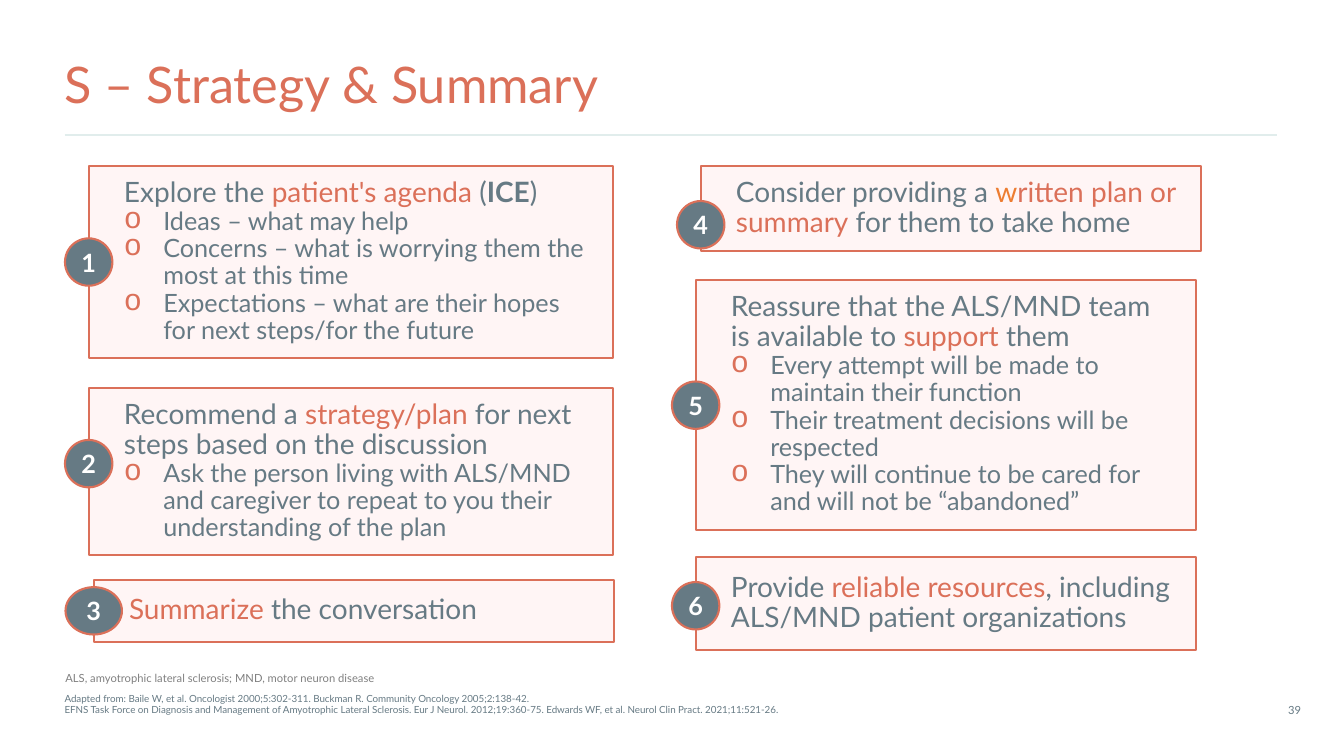
from dataclasses import dataclass

from lxml import etree
from pptx import Presentation
from pptx.dml.color import RGBColor
from pptx.enum.shapes import MSO_CONNECTOR, MSO_SHAPE
from pptx.enum.text import MSO_ANCHOR, MSO_AUTO_SIZE, PP_ALIGN
from pptx.oxml.ns import qn
from pptx.util import Inches, Pt

RECTANGLE, OVAL = MSO_SHAPE.RECTANGLE, MSO_SHAPE.OVAL
TOP, MIDDLE, BOTTOM = MSO_ANCHOR.TOP, MSO_ANCHOR.MIDDLE, MSO_ANCHOR.BOTTOM
LEFT, CENTER = PP_ALIGN.LEFT, PP_ALIGN.CENTER


@dataclass(frozen=True)
class Theme:
    font: str = "Lato"
    accent: str = "DB7059"
    slate: str = "667A84"
    orange: str = "ED7D31"
    blush: str = "FFF5F5"
    white: str = "FFFFFF"
    gray: str = "808080"
    rule: str = "E1EDEC"
    title_size: float = 36
    lead_size: float = 20
    bullet_size: float = 18
    note_size: float = 8
    source_size: float = 7
    line_width: float = 1.5
    spacing: float = 0.9


theme = Theme()


def set_frame(frame, anchor, insets=(0, 0, 0, 0), wrap=True):
    frame.auto_size = MSO_AUTO_SIZE.NONE
    frame.word_wrap = wrap
    frame.vertical_anchor = anchor
    (frame.margin_left, frame.margin_top,
     frame.margin_right, frame.margin_bottom) = map(Inches, insets)


def format_paragraph(paragraph, size, color, align=LEFT, spacing=theme.spacing, bold=False):
    paragraph.alignment = align
    paragraph.line_spacing = spacing
    paragraph.space_before = paragraph.space_after = Pt(0)
    paragraph.font.name = theme.font
    paragraph.font.size = Pt(size)
    paragraph.font.bold = bold
    paragraph.font.color.rgb = RGBColor.from_string(color)


presentation = Presentation()
presentation.slide_width, presentation.slide_height = Inches(13.33), Inches(7.5)
slide = presentation.slides.add_slide(presentation.slide_layouts[1])
shapes = slide.shapes

# Page grid, in inches
margin, content_width = 0.64, 12.03
badge_size = 0.47

# Title and the rule below it
title = shapes.title
title.left, title.top = Inches(margin), Inches(0.59)
title.width, title.height = Inches(content_width), Inches(0.55)
set_frame(title.text_frame, MIDDLE)
title.text_frame.text = "S – Strategy & Summary"
format_paragraph(title.text_frame.paragraphs[0], theme.title_size, theme.accent)

rule = shapes.add_connector(MSO_CONNECTOR.STRAIGHT, Inches(margin), Inches(1.34),
                            Inches(margin + content_width), Inches(1.34))
rule.line.color.rgb = RGBColor.from_string(theme.rule)
rule.line.width = Pt(theme.line_width)
etree.SubElement(rule._element.spPr, qn("a:effectLst"))

# Sources in the body placeholder
sources = slide.placeholders[1]
sources.left, sources.top = Inches(margin), Inches(6.89)
sources.width, sources.height = Inches(11.13), Inches(0.21)
set_frame(sources.text_frame, BOTTOM)
sources.text_frame.text = (
    "Adapted from: Baile W, et al. Oncologist 2000;5:302-311. "
    "Buckman R. Community Oncology 2005;2:138-42.\n"
    "EFNS Task Force on Diagnosis and Management of Amyotrophic Lateral Sclerosis. "
    "Eur J Neurol. 2012;19:360-75. Edwards WF, et al. Neurol Clin Pract. 2021;11:521-26.")
for paragraph in sources.text_frame.paragraphs:
    properties = paragraph._p.get_or_add_pPr()
    properties.set("marL", "0")
    properties.set("indent", "0")
    etree.SubElement(properties, qn("a:buNone"))
    format_paragraph(paragraph, theme.source_size, theme.slate)

# Cards in number order: box, vertical inset, badge width, badge drop from the
# middle of the box, lead runs (text, colour, bold), bullets
slate, accent, orange = theme.slate, theme.accent, theme.orange
cards = [
    ((0.88, 1.65, 5.2, 1.9), 0.12, badge_size, 0,
     [("Explore the ", slate, False), ("patient's agenda ", accent, False),
      ("(", slate, False), ("ICE", slate, True), (")", slate, False)],
     ["Ideas – what may help",
      "Concerns – what is worrying them the most at this time",
      "Expectations – what are their hopes for next steps/for the future"]),
    ((0.88, 3.85, 5.2, 1.66), 0.12, badge_size, -0.08,
     [("Recommend a ", slate, False), ("strategy/plan ", accent, False),
      ("for next steps based on the discussion", slate, False)],
     ["Ask the person living with ALS/MND and caregiver to repeat to you "
      "their understanding of the plan"]),
    ((0.93, 5.75, 5.16, 0.62), 0.16, 0.56, 0,
     [("Summarize", accent, False), (" the conversation", slate, False)], []),
    ((6.95, 1.65, 4.96, 0.84), 0.12, badge_size, 0.16,
     [("Consider providing a ", slate, False), ("w", orange, False),
      ("ritten plan or summary", accent, False),
      (" for them to take home", slate, False)], []),
    ((6.9, 2.78, 4.96, 2.48), 0.12, badge_size, 0,
     [("Reassure that the ALS/MND team is available to ", slate, False),
      ("support", accent, False), (" them", slate, False)],
     ["Every attempt will be made to maintain their function",
      "Their treatment decisions will be respected",
      "They will continue to be cared for and will not be “abandoned”"]),
    ((6.9, 5.53, 4.96, 0.92), 0.16, badge_size, 0.02,
     [("Provide ", slate, False), ("reliable resources", accent, False),
      (", including ALS/MND patient organizations", slate, False)], []),
]

for number, (box, inset, badge_width, drop, lead, bullets) in enumerate(cards, start=1):
    left, top, width, height = box
    badge_box = (left - badge_width / 2, top + (height - badge_size) / 2 + drop,
                 badge_width, badge_size)
    card = shapes.add_shape(RECTANGLE, *map(Inches, box))
    badge = shapes.add_shape(OVAL, *map(Inches, badge_box))
    for shape, fill in ((card, theme.blush), (badge, theme.slate)):
        shape.shadow.inherit = False
        shape.fill.solid()
        shape.fill.fore_color.rgb = RGBColor.from_string(fill)
        shape.line.color.rgb = RGBColor.from_string(theme.accent)
        shape.line.width = Pt(theme.line_width)

    # Number on the badge
    set_frame(badge.text_frame, MIDDLE)
    badge.text_frame.text = str(number)
    format_paragraph(badge.text_frame.paragraphs[0], theme.bullet_size, theme.white,
                     CENTER, 1.0, True)

    # Lead sentence
    set_frame(card.text_frame, TOP, (0.35, inset, 0.2, inset))
    paragraph = card.text_frame.paragraphs[0]
    format_paragraph(paragraph, theme.lead_size, theme.slate)
    for text, color, bold in lead:
        run = paragraph.add_run()
        run.text = text
        run.font.bold = bold
        run.font.color.rgb = RGBColor.from_string(color)

    # Bullets
    for text in bullets:
        paragraph = card.text_frame.add_paragraph()
        paragraph.text = text
        properties = paragraph._p.get_or_add_pPr()
        properties.set("marL", str(Inches(0.39)))
        properties.set("indent", str(Inches(-0.39)))
        bullet_color = etree.SubElement(properties, qn("a:buClr"))
        etree.SubElement(bullet_color, qn("a:srgbClr"), val=theme.accent)
        etree.SubElement(properties, qn("a:buSzPct"), val="120000")
        etree.SubElement(properties, qn("a:buFont"), typeface="Courier New")
        etree.SubElement(properties, qn("a:buChar"), char="o")
        format_paragraph(paragraph, theme.bullet_size, theme.slate)

# Abbreviations and page number
small_texts = [
    ((0.55, 6.61, 7.87, 0.24), theme.gray, LEFT, True,
     "ALS, amyotrophic lateral sclerosis; MND, motor neuron disease"),
    ((12.67, 6.93, 0.34, 0.24), theme.slate, CENTER, False, "39"),
]
for box, color, align, wrap, text in small_texts:
    frame = shapes.add_textbox(*map(Inches, box)).text_frame
    set_frame(frame, TOP, (0.1, 0.05, 0.1, 0.05), wrap)
    frame.text = text
    format_paragraph(frame.paragraphs[0], theme.note_size, color, align, 1.0)

presentation.save("out.pptx")
